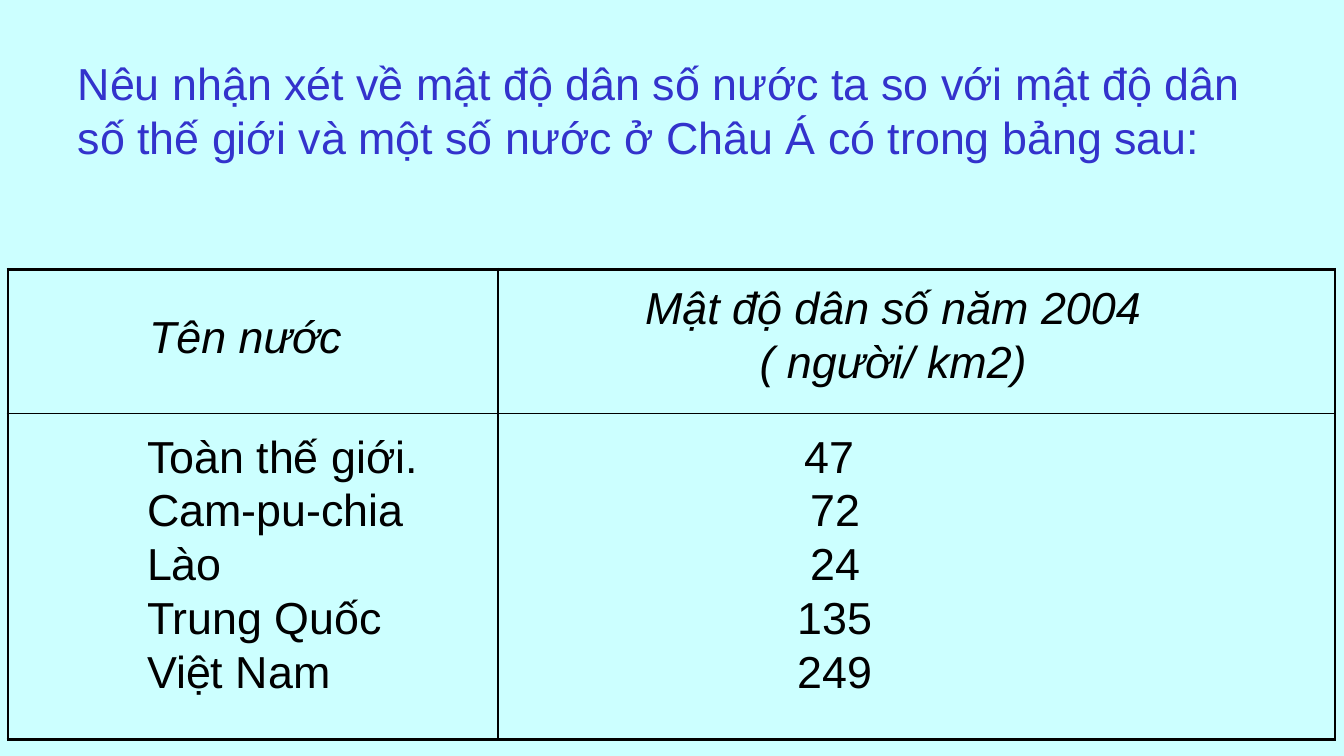
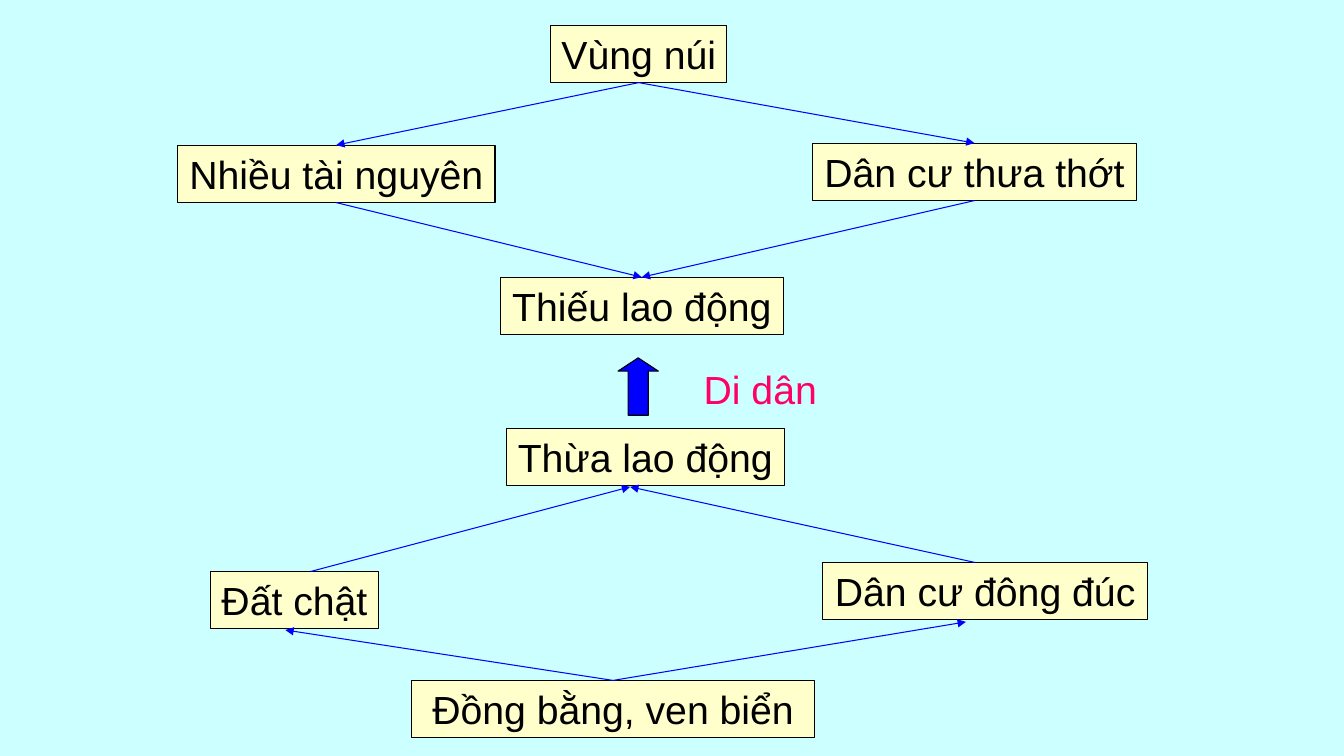
from lxml import etree
from pptx import Presentation
from pptx.dml.color import RGBColor
from pptx.enum.shapes import MSO_CONNECTOR as Conn, MSO_SHAPE as Shape
from pptx.enum.text import MSO_ANCHOR as Anchor, MSO_AUTO_SIZE as Fit
from pptx.enum.text import PP_ALIGN as Align
from pptx.oxml.ns import qn
from pptx.util import Inches, Pt

FONT = "Arial"
BACK, PALE, BLACK = "CCFFFF", "FFFFCC", "000000"
INDIGO, BLUE, PINK = "3333CC", "0000FF", "FF0066"
TOP, BOTTOM = 0, 2
TITLE_ONLY, BLANK = 5, 6


def paint(fill, color):
    fill.solid()
    fill.fore_color.rgb = RGBColor.from_string(color)


def write(frame, text, size=28, color=BLACK, italic=False,
          align=Align.CENTER, anchor=Anchor.TOP, wrap=False,
          fit=Fit.SHAPE_TO_FIT_TEXT):
    frame.word_wrap = wrap
    frame.auto_size = fit
    frame.vertical_anchor = anchor
    for i, line in enumerate(text.split("\n")):
        para = frame.paragraphs[0] if i == 0 else frame.add_paragraph()
        para.alignment = align
        run = para.add_run()
        run.text = line
        font = run.font
        font.name, font.size, font.italic = FONT, Pt(size), italic
        paint(font.fill, color)


def add_title(slide, text):
    title = slide.shapes.title
    title.left, title.top = Inches(0.67), Inches(0.5)
    title.width, title.height = Inches(12.17), Inches(1.72)
    write(title.text_frame, text, size=32, color=INDIGO,
          align=Align.LEFT, wrap=True, fit=Fit.NONE)


def add_edge(cell, side, width):
    props = cell._tc.get_or_add_tcPr()
    edge = etree.SubElement(props, qn("a:ln" + side), w=str(Pt(width)))
    fill = etree.SubElement(edge, qn("a:solidFill"))
    etree.SubElement(fill, qn("a:srgbClr"), val=BLACK)


def add_grid(slide, x, y, cols, rows):
    table = slide.shapes.add_table(
        len(rows), len(cols), Inches(x), Inches(y),
        Inches(sum(cols)), Inches(sum(rows))).table
    table.first_row = table.horz_banding = False
    for col, width in zip(table.columns, cols):
        col.width = Inches(width)
    for r, height in enumerate(rows):
        table.rows[r].height = Inches(height)
        for c in range(len(cols)):
            cell = table.cell(r, c)
            outer = {"L": c == 0, "R": c == len(cols) - 1,
                     "T": r == 0, "B": r == len(rows) - 1}
            for side, thick in outer.items():
                add_edge(cell, side, 2.25 if thick else 1)
            cell.fill.background()


def add_shape(slide, kind, x, y, w, h, fill):
    shape = slide.shapes.add_shape(
        kind, Inches(x), Inches(y), Inches(w), Inches(h))
    shape.shadow.inherit = False
    paint(shape.fill, fill)
    paint(shape.line.fill, BLACK)
    shape.line.width = Pt(0.75)
    return shape


def add_box(slide, text, x, y, w):
    box = add_shape(slide, Shape.RECTANGLE, x, y, w, 0.57, PALE)
    write(box.text_frame, text)
    return box


def add_label(slide, text, x, y, w, h, **style):
    label = slide.shapes.add_textbox(
        Inches(x), Inches(y), Inches(w), Inches(h))
    write(label.text_frame, text, **style)


def add_link(slide, start, end):
    link = slide.shapes.add_connector(Conn.STRAIGHT, 0, 0, 0, 0)
    if isinstance(start[0], float):
        link.begin_x, link.begin_y = map(Inches, start)
    else:
        link.begin_connect(*start)
    if isinstance(end[0], float):
        link.end_x, link.end_y = map(Inches, end)
    else:
        link.end_connect(*end)
    paint(link.line.fill, BLUE)
    link.line.width = Pt(0.75)
    props = link._element.spPr
    etree.SubElement(props.find(qn("a:ln")), qn("a:tailEnd"), type="triangle")
    etree.SubElement(props, qn("a:effectLst"))


def build_table(deck):
    slide = deck.slides.add_slide(deck.slide_layouts[TITLE_ONLY])
    add_title(slide, "Nêu nhận xét về mật độ dân số nước ta so với mật độ dân "
                     "số thế giới và một số nước ở Châu Á có trong bảng sau:")
    add_grid(slide, 0.08, 2.67, cols=(4.86, 8.3), rows=(1.43, 3.24))
    add_label(slide, "Tên nước", 1.37, 3.01, 2.13, 0.64,
              size=32, italic=True)
    add_label(slide, "Mật độ dân số năm 2004\n( người/ km2)",
              5.75, 2.73, 6.22, 1.18, size=32, italic=True, wrap=True)
    add_label(slide, "Toàn thế giới.\nCam-pu-chia\nLào\nTrung Quốc\nViệt Nam",
              1.36, 4.2, 2.91, 2.79, size=32, align=Align.LEFT)
    add_label(slide, "47 \n72\n24\n135\n249", 7.81, 4.2, 0.95, 2.79, size=32)


def build_flow(deck):
    slide = deck.slides.add_slide(deck.slide_layouts[BLANK])
    hills = add_box(slide, "Vùng núi", 5.46, 0.25, 1.75)
    rich = add_box(slide, "Nhiều tài nguyên", 1.76, 1.44, 3.15)
    sparse = add_box(slide, "Dân cư thưa thớt", 8.06, 1.42, 3.21)
    short = add_box(slide, "Thiếu lao động", 4.96, 2.75, 2.81)
    add_label(slide, "Di dân", 6.87, 3.58, 1.34, 0.57, color=PINK)
    add_box(slide, "Thừa lao động", 5.02, 4.25, 2.76)
    add_box(slide, "Đất chật", 2.09, 5.67, 1.66)
    add_box(slide, "Dân cư đông đúc", 8.16, 5.58, 3.22)
    plain = add_box(slide, "Đồng bằng, ven biển", 4.08, 6.75, 4)
    plain.text_frame.word_wrap = True
    spare = (6.25, 4.83)
    links = [
        ((hills, BOTTOM), (rich, TOP)),
        ((hills, BOTTOM), (sparse, TOP)),
        ((rich, BOTTOM), (short, TOP)),
        ((sparse, BOTTOM), (short, TOP)),
        ((3.08, 5.67), spare),
        ((9.67, 5.58), spare),
        ((plain, TOP), (2.83, 6.25)),
        ((plain, TOP), (9.58, 6.17)),
    ]
    for start, end in links:
        add_link(slide, start, end)
    arrow = add_shape(slide, Shape.UP_ARROW, 6.13, 3.55, 0.4, 0.57, BLUE)
    arrow.adjustments[1] = 0.33


def main():
    deck = Presentation()
    deck.slide_width, deck.slide_height = Inches(13.33), Inches(7.5)
    paint(deck.slide_master.background.fill, BACK)
    build_table(deck)
    build_flow(deck)
    deck.save("out.pptx")


if __name__ == "__main__":
    main()
